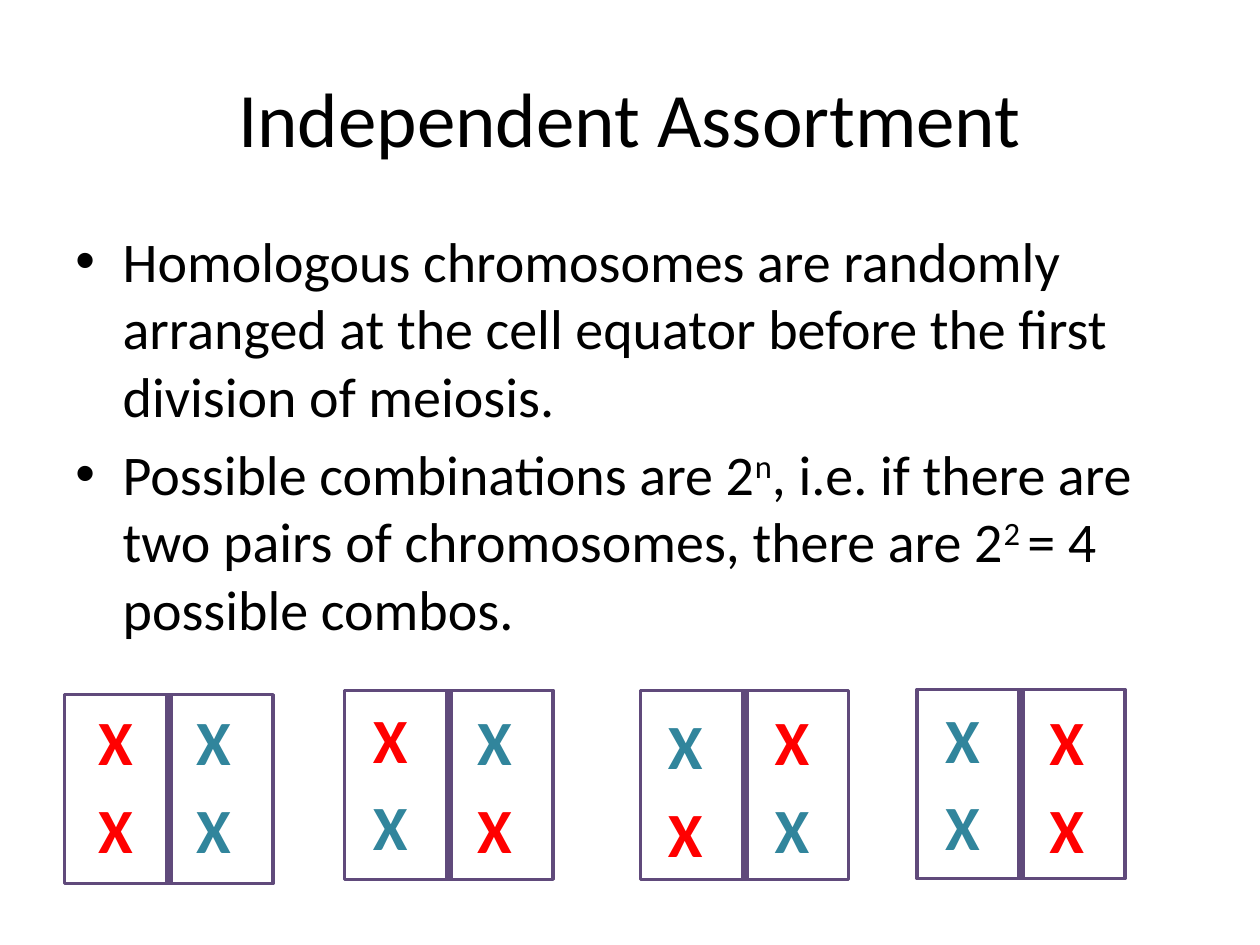
from dataclasses import dataclass

from lxml import etree
from pptx import Presentation
from pptx.dml.color import RGBColor
from pptx.enum.shapes import MSO_CONNECTOR as Line, MSO_SHAPE as Shape
from pptx.enum.text import MSO_ANCHOR as Anchor, PP_ALIGN as Align
from pptx.oxml.ns import qn
from pptx.util import Pt


@dataclass(frozen=True)
class Theme:
    font: str = "Calibri"
    text: RGBColor = RGBColor(0x00, 0x00, 0x00)
    red: RGBColor = RGBColor(0xFF, 0x00, 0x00)
    teal: RGBColor = RGBColor(0x31, 0x85, 0x9C)
    purple: RGBColor = RGBColor(0x60, 0x4A, 0x7B)
    title: float = 44
    body: float = 32
    mark: float = 36


THEME = Theme()
RED, TEAL = THEME.red, THEME.teal
CELL_W, CELL_H = 119, 108
PAIR_W, PAIR_H = 51, 104

BULLETS = [
    [("Homologous chromosomes are randomly arranged at the cell equator "
      "before the first division of meiosis.", False)],
    [("Possible combinations are 2", False), ("n", True),
     (", i.e. if there are two pairs of chromosomes, there are 2", False),
     ("2 ", True), ("= 4 possible combos.", False)],
]

CELLS = [(37, 397), (197, 394.5), (366, 394.5), (524, 394)]

PAIRS = [
    (49, 398, RED, RED), (105, 398, TEAL, TEAL),
    (206, 396.5, RED, TEAL), (265.5, 398, TEAL, RED),
    (374.5, 400, TEAL, RED), (435.5, 398, RED, TEAL),
    (533, 396.5, TEAL, TEAL), (592.5, 398, RED, RED),
]


def style(r, size, color=THEME.text, bold=False):
    r.font.name = THEME.font
    r.font.size = Pt(size)
    r.font.color.rgb = color
    r.font.bold = bold


def add_text_frame(s, x, y, w, h):
    tf = s.shapes.add_textbox(Pt(x), Pt(y), Pt(w), Pt(h)).text_frame
    tf.word_wrap = True
    return tf


def add_title(s, text):
    tf = add_text_frame(s, 36, 21.6, 648, 90)
    tf.vertical_anchor = Anchor.MIDDLE
    tf.text = text
    p = tf.paragraphs[0]
    p.alignment = Align.CENTER
    style(p.runs[0], THEME.title)


def set_bullet(p):
    pPr = p._p.get_or_add_pPr()
    pPr.set("marL", str(Pt(27)))
    pPr.set("indent", str(Pt(-27)))
    etree.SubElement(pPr, qn("a:buFont")).set("typeface", "Arial")
    etree.SubElement(pPr, qn("a:buChar")).set("char", "•")


def add_bullets(s, items):
    tf = add_text_frame(s, 36, 126, 648, 356.4)
    for i, parts in enumerate(items):
        p = tf.paragraphs[0] if i == 0 else tf.add_paragraph()
        set_bullet(p)
        if i:
            p.space_before = Pt(6.4)
        for text, raised in parts:
            r = p.add_run()
            r.text = text
            style(r, THEME.body)
            if raised:
                r._r.get_or_add_rPr().set("baseline", "30000")


def add_cell(s, x, y):
    group = s.shapes.add_group_shape()
    sp = group.shapes.add_shape(Shape.RECTANGLE, Pt(x), Pt(y), Pt(CELL_W), Pt(CELL_H))
    sp.shadow.inherit = False
    sp.fill.background()
    sp.line.color.rgb = THEME.purple
    sp.line.width = Pt(2)
    mid = Pt(x + CELL_W / 2)
    equator = group.shapes.add_connector(Line.STRAIGHT, mid, Pt(y), mid, Pt(y + CELL_H))
    equator.begin_connect(sp, 0)
    equator.end_connect(sp, 2)
    equator.line.color.rgb = THEME.purple
    equator.line.width = Pt(4.5)
    etree.SubElement(equator._element.spPr, qn("a:effectLst"))


def add_pair(s, x, y, *colors):
    tf = add_text_frame(s, x, y, PAIR_W, PAIR_H)
    tf.text = "X\nX"
    for p, color in zip(tf.paragraphs, colors):
        style(p.runs[0], THEME.mark, color, bold=True)
    tf.paragraphs[1].space_before = Pt(7)


def main():
    prs = Presentation()
    prs.slide_width, prs.slide_height = Pt(720), Pt(540)
    s = prs.slides.add_slide(prs.slide_layouts[6])
    add_title(s, "Independent Assortment")
    add_bullets(s, BULLETS)
    for cell in CELLS:
        add_cell(s, *cell)
    for pair in PAIRS:
        add_pair(s, *pair)
    prs.save("out.pptx")


if __name__ == "__main__":
    main()
